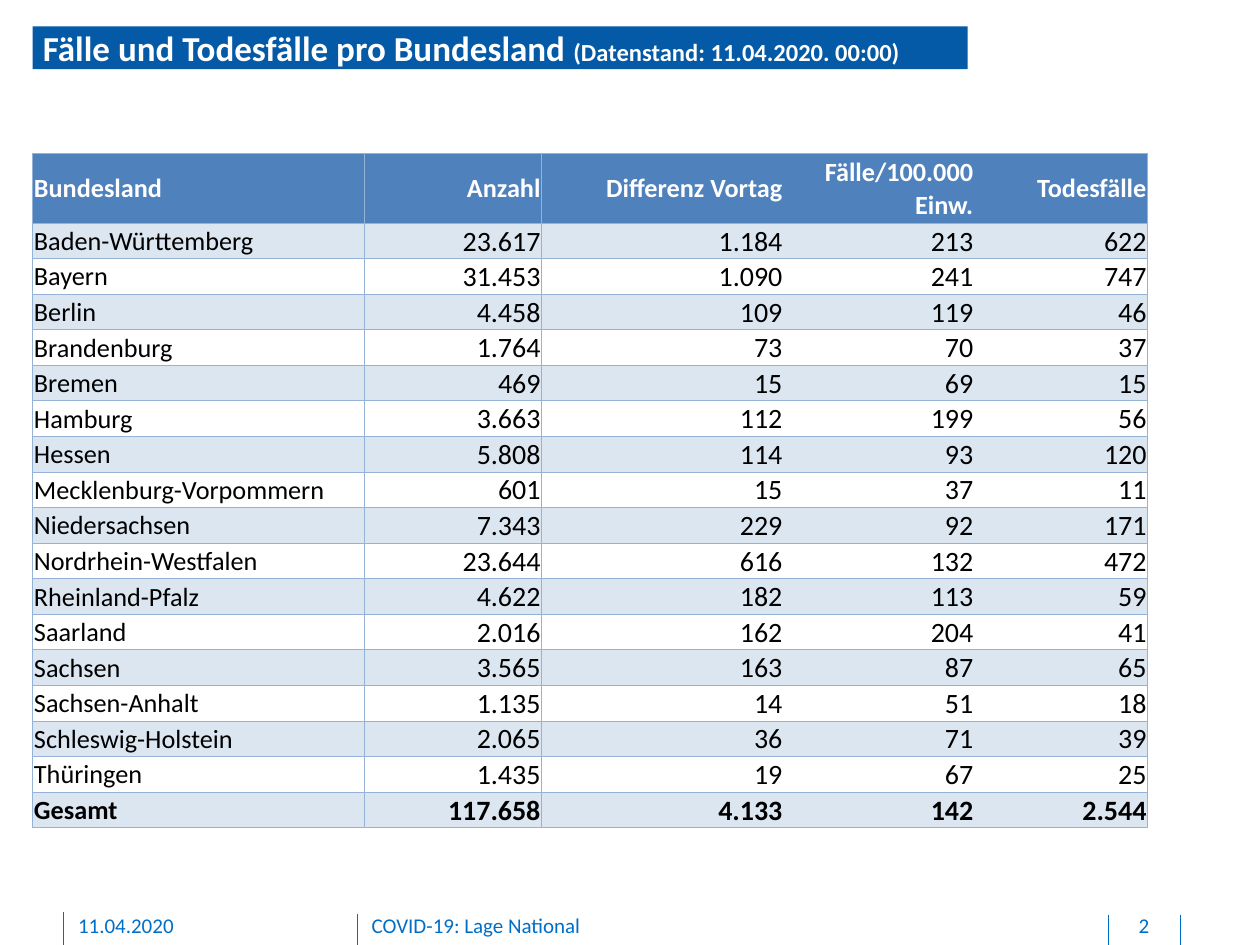
from typing import NamedTuple

from lxml.etree import SubElement
from pptx import Presentation
from pptx.dml.color import RGBColor
from pptx.enum.shapes import MSO_CONNECTOR as Connector, MSO_SHAPE as Shape
from pptx.enum.text import MSO_ANCHOR as Anchor, PP_ALIGN as Align
from pptx.oxml.ns import qn
from pptx.util import Emu, Inches, Pt

# The slide is a grid of 100 columns by 75 rows, each 0.1 inch.
COLS, ROWS = 100, 75
FONT = "Calibri"
WHITE, BLACK = "FFFFFF", "000000"
TITLE_BLUE, FOOTER_BLUE = "045AA6", "006EC7"
HEADER_BLUE, BAND_BLUE, BORDER_BLUE = "4F81BD", "DCE6F1", "95B3D7"
NO_STYLE = "{2D5ABB26-0587-4C30-8999-92F81FD0307C}"


class Box(NamedTuple):
    left: float
    top: float
    width: float
    height: float


class FooterField(NamedTuple):
    text: str
    box: Box
    align: Align = Align.LEFT


class Divider(NamedTuple):
    x: float
    top: float


class State(NamedTuple):
    name: str
    cases: str
    change: str
    per_100k: str
    deaths: str


FOOTER = [
    FooterField("11.04.2020", Box(6.2, 72.4, 20.3, 2.1)),
    FooterField("COVID-19: Lage National", Box(29.5, 72.4, 56.7, 2.1)),
    FooterField("2", Box(88.1, 72.4, 5.4, 2.1), Align.CENTER),
]
DIVIDERS = [Divider(28.4, 72.5), Divider(5, 72.4), Divider(93.7, 72.6), Divider(88, 72.6)]

TABLE_BOX = Box(2.6, 12.2, 88.5, 52.7)
COLUMN_WIDTHS = [26.35, 14.05, 19.2, 15.15, 13.75]
HEADER_HEIGHT = 5.5
HEADER = State("Bundesland", "Anzahl", "Differenz Vortag", "Fälle/100.000 Einw.", "Todesfälle")
STATES = [
    State("Baden-Württemberg", "23.617", "1.184", "213", "622"),
    State("Bayern", "31.453", "1.090", "241", "747"),
    State("Berlin", "4.458", "109", "119", "46"),
    State("Brandenburg", "1.764", "73", "70", "37"),
    State("Bremen", "469", "15", "69", "15"),
    State("Hamburg", "3.663", "112", "199", "56"),
    State("Hessen", "5.808", "114", "93", "120"),
    State("Mecklenburg-Vorpommern", "601", "15", "37", "11"),
    State("Niedersachsen", "7.343", "229", "92", "171"),
    State("Nordrhein-Westfalen", "23.644", "616", "132", "472"),
    State("Rheinland-Pfalz", "4.622", "182", "113", "59"),
    State("Saarland", "2.016", "162", "204", "41"),
    State("Sachsen", "3.565", "163", "87", "65"),
    State("Sachsen-Anhalt", "1.135", "14", "51", "18"),
    State("Schleswig-Holstein", "2.065", "36", "71", "39"),
    State("Thüringen", "1.435", "19", "67", "25"),
    State("Gesamt", "117.658", "4.133", "142", "2.544"),
]


def grid(units: float) -> Emu:
    return Inches(units / 10)


def place(box: Box) -> list[Emu]:
    return [grid(units) for units in box]


def rgb(color: str) -> RGBColor:
    return RGBColor.from_string(color)


def add_text(p, text: str, *, size: float, color: str, bold: bool = False,
             align: Align = Align.LEFT) -> None:
    p.alignment = align
    r = p.add_run()
    r.text = text
    r.font.name, r.font.size, r.font.bold = FONT, Pt(size), bold
    r.font.color.rgb = rgb(color)


def set_margins(target, left: float, top: float, right: float, bottom: float) -> None:
    target.margin_left, target.margin_top = grid(left), grid(top)
    target.margin_right, target.margin_bottom = grid(right), grid(bottom)


def add_title(slide) -> None:
    sp = slide.shapes.add_shape(Shape.RECTANGLE, *place(Box(2.6, 2.1, 74.2, 3.4)))
    sp.shadow.inherit = False
    sp.fill.solid()
    sp.fill.fore_color.rgb = rgb(TITLE_BLUE)
    sp.line.fill.background()
    tf = sp.text_frame
    tf.word_wrap = True
    tf.vertical_anchor = Anchor.MIDDLE
    set_margins(tf, 0.8, 0, 0, 0)
    p = tf.paragraphs[0]
    add_text(p, "Fälle und Todesfälle pro Bundesland ", size=20, color=WHITE, bold=True)
    add_text(p, "(Datenstand: 11.04.2020. 00:00)", size=14, color=WHITE, bold=True)


def add_divider(slide, divider: Divider) -> None:
    x = grid(divider.x)
    line = slide.shapes.add_connector(Connector.STRAIGHT, x, grid(divider.top), x, grid(ROWS))
    line.line.color.rgb = rgb(FOOTER_BLUE)
    line.line.width = Pt(0.5)
    SubElement(line._element.spPr, qn("a:effectLst"))


def add_footer_field(slide, field: FooterField) -> None:
    tf = slide.shapes.add_textbox(*place(field.box)).text_frame
    tf.word_wrap = True
    set_margins(tf, 0, 0, 0, 0.5)
    add_text(tf.paragraphs[0], field.text, size=12, color=FOOTER_BLUE, align=field.align)


def add_borders(cell, sides: str) -> None:
    """Draw thin borders on the given sides, a subset of "LRTB" in that order."""
    tc_pr = cell._tc.get_or_add_tcPr()
    for side in sides:
        ln = SubElement(tc_pr, qn(f"a:ln{side}"), w=str(Pt(0.5)))
        SubElement(SubElement(ln, qn("a:solidFill")), qn("a:srgbClr"), val=BORDER_BLUE)


def fill_cell(cell, text: str, row: int, col: int) -> None:
    is_header, is_total = row == 0, row == len(STATES)
    sides = {0: "LRTB", 1: "LTB", len(COLUMN_WIDTHS) - 1: "RTB"}.get(col, "TB")
    add_borders(cell, sides)
    if is_header or row % 2:
        cell.fill.solid()
        cell.fill.fore_color.rgb = rgb(HEADER_BLUE if is_header else BAND_BLUE)
    else:
        cell.fill.background()
    cell.vertical_anchor = Anchor.MIDDLE
    set_margins(cell, 0.1, 0.1, 0.1, 0)
    add_text(cell.text_frame.paragraphs[0], text,
             size=15 if is_header or col == 0 else 16,
             color=WHITE if is_header else BLACK,
             bold=is_header or is_total,
             align=Align.RIGHT if col else Align.LEFT)


def add_case_table(slide) -> None:
    rows = [HEADER, *STATES]
    frame = slide.shapes.add_table(len(rows), len(COLUMN_WIDTHS), *place(TABLE_BOX))
    table = frame.table
    table._tbl.tblPr.find(qn("a:tableStyleId")).text = NO_STYLE
    for column, width in zip(table.columns, COLUMN_WIDTHS):
        column.width = grid(width)
    body_height = (TABLE_BOX.height + 0.8 - HEADER_HEIGHT) / len(STATES)
    for i, values in enumerate(rows):
        table.rows[i].height = grid(body_height if i else HEADER_HEIGHT)
        for j, text in enumerate(values):
            fill_cell(table.cell(i, j), text, i, j)


def main() -> None:
    prs = Presentation()
    prs.slide_width, prs.slide_height = grid(COLS), grid(ROWS)
    slide = prs.slides.add_slide(prs.slide_layouts[6])
    for divider in DIVIDERS:
        add_divider(slide, divider)
    for field in FOOTER:
        add_footer_field(slide, field)
    add_title(slide)
    add_case_table(slide)
    prs.save("out.pptx")


if __name__ == "__main__":
    main()
